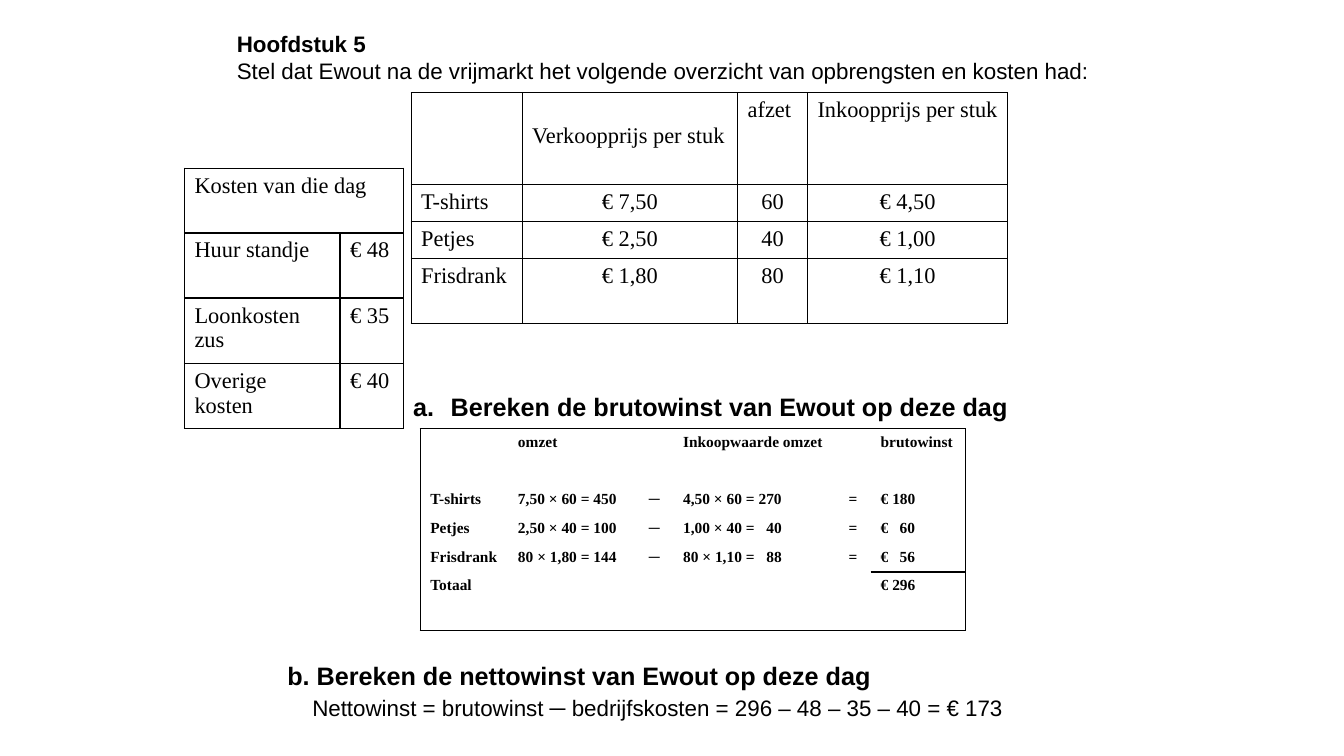
from lxml.etree import SubElement
from pptx import Presentation
from pptx.dml.color import RGBColor
from pptx.enum.text import MSO_ANCHOR, MSO_AUTO_SIZE, PP_ALIGN
from pptx.oxml.ns import qn
from pptx.util import Cm, Pt

BLACK = "000000"
SERIF = "Times New Roman"


def color(code):
    return RGBColor.from_string(code)


def write(para, text, size=16, font="Arial", bold=False, align=PP_ALIGN.LEFT):
    run = para.add_run()
    run.text = text
    para.alignment = align
    run.font.size = Pt(size)
    run.font.name = font
    run.font.bold = bold
    run.font.color.rgb = color(BLACK)


def frame(slide, box, anchor=MSO_ANCHOR.TOP):
    """Add a text box that does not wrap and return its text frame."""
    body = slide.shapes.add_textbox(*map(Cm, box)).text_frame
    body.word_wrap = False
    body.auto_size = MSO_AUTO_SIZE.SHAPE_TO_FIT_TEXT
    body.vertical_anchor = anchor
    return body


def letter(para, indent):
    """Number a paragraph a., b., c. with a hanging indent."""
    props = para._p.get_or_add_pPr()
    props.set("marL", str(Cm(indent)))
    props.set("indent", str(-Cm(indent)))
    SubElement(props, qn("a:buFont"), typeface="+mj-lt")
    SubElement(props, qn("a:buAutoNum"), type="alphaLcPeriod")


def tab(para, stop):
    stops = SubElement(para._p.get_or_add_pPr(), qn("a:tabLst"))
    SubElement(stops, qn("a:tab"), pos=str(Cm(stop)), algn="l")


def border(cell, sides):
    """Draw the named sides (of LRTB) in black and hide the others."""
    props = cell._tc.get_or_add_tcPr()
    for side in "LRTB":
        line = SubElement(props, qn("a:ln" + side), w=str(Pt(1)))
        if side in sides:
            fill = SubElement(line, qn("a:solidFill"))
            SubElement(fill, qn("a:srgbClr"), val=BLACK)
        else:
            SubElement(line, qn("a:noFill"))
    cell.fill.background()


def grid(slide, box, cols, rows):
    """Add a bare table at the left and top of its box."""
    left, top = box
    table = slide.shapes.add_table(
        len(rows), len(cols), Cm(left), Cm(top), Cm(sum(cols)), Cm(sum(rows))
    ).table
    table.first_row = table.horz_banding = False
    for col, width in zip(table.columns, cols):
        col.width = Cm(width)
    for row, height in zip(table.rows, rows):
        row.height = Cm(height)
    return table


def cells(table, data):
    """Yield row, column, cell and text for each entry."""
    for r, line in enumerate(data):
        for c, text in enumerate(line):
            yield r, c, table.cell(r, c), text


def intro(slide, box):
    body = frame(slide, box, MSO_ANCHOR.MIDDLE)
    write(body.paragraphs[0], "Hoofdstuk 5", bold=True)
    write(body.add_paragraph(),
          "Stel dat Ewout na de vrijmarkt het volgende overzicht van opbrengsten en kosten had:")


def prices(slide, box):
    data = [
        ["", "Verkoopprijs per stuk", "afzet", "Inkoopprijs per stuk"],
        ["T-shirts", "€ 7,50", "60", "€ 4,50"],
        ["Petjes", "€ 2,50", "40", "€ 1,00"],
        ["Frisdrank", "€ 1,80", "80", "€ 1,10"],
    ]
    table = grid(slide, box, [2.8, 5.43, 1.76, 5.05], [2.3, 0.94, 0.94, 1.63])
    for r, c, cell, text in cells(table, data):
        border(cell, "LRTB")
        if text:
            align = PP_ALIGN.CENTER if r and c else PP_ALIGN.LEFT
            write(cell.text_frame.paragraphs[0], text, font=SERIF, align=align)
    # The first heading sits one line lower
    table.cell(0, 1).margin_top = Cm(0.76)


def costs(slide, box):
    data = [
        ["Kosten van die dag", ""],
        ["Huur standje", "€ 48"],
        ["Loonkosten zus", "€ 35"],
        ["Overige kosten", "€ 40"],
    ]
    table = grid(slide, box, [3.92, 1.59], [1.63] + [1.64] * 3)
    table.cell(0, 0).merge(table.cell(0, 1))
    for r, c, cell, text in cells(table, data):
        border(cell, "LRTB")
        if text:
            write(cell.text_frame.paragraphs[0], text, font=SERIF)


def profit(slide, box):
    data = [
        ["", "omzet", "", "Inkoopwaarde omzet", "", "brutowinst"],
        ["T-shirts", "7,50 × 60 = 450", "─", "4,50 × 60 = 270", "=", "€ 180"],
        ["Petjes", "2,50 × 40 = 100", "─", "1,00 × 40 =\t40", "=", "€\t60"],
        ["Frisdrank", "80 × 1,80 = 144", "─", "80 × 1,10 =\t88", "=", "€\t56"],
        ["Totaal", "", "", "", "", "€ 296"],
    ]
    stops = {3: 2.1, 5: 0.48}
    end, last = len(data) - 1, len(data[0]) - 1
    table = grid(slide, box, [2.21, 3.3, 0.86, 4.17, 0.81, 2.39],
                 [1.45] + [0.72] * 3 + [1.47])
    for r, c, cell, text in cells(table, data):
        # Outer frame, plus the sum line above the total
        sides = "L" * (c == 0) + "R" * (c == last)
        sides += "T" * (r == 0 or (r, c) == (end, last))
        sides += "B" * (r == end or (r, c) == (end - 1, last))
        border(cell, sides)
        para = cell.text_frame.paragraphs[0]
        if "\t" in text:
            tab(para, stops[c])
        if text:
            write(para, text, size=11, font=SERIF, bold=True)


def gross(slide, box):
    para = frame(slide, box).paragraphs[0]
    letter(para, 0.95)
    write(para, "Bereken de brutowinst van Ewout op deze dag", size=18, bold=True)


def net(slide, box):
    left, top, width, height = box
    head = frame(slide, (left, top, 15.6, 1.02))
    write(head.paragraphs[0], "b. Bereken de nettowinst van Ewout op deze dag",
          size=18, bold=True)
    answer = frame(slide, (left + 0.63, top + 0.85, width - 0.63, height - 0.85),
                   MSO_ANCHOR.MIDDLE)
    write(answer.paragraphs[0],
          "Nettowinst = brutowinst ─ bedrijfskosten = 296 – 48 – 35 – 40 = € 173")


def main():
    deck = Presentation()
    deck.slide_width, deck.slide_height = Cm(33.87), Cm(19.05)
    slide = deck.slides.add_slide(deck.slide_layouts[6])
    intro(slide, (5.72, 0.62, 22.05, 1.63))
    prices(slide, (10.36, 2.34))
    costs(slide, (4.65, 4.24))
    profit(slide, (10.59, 10.8))
    gross(slide, (10.16, 9.74, 15.9, 1.02))
    net(slide, (6.99, 16.51, 18.77, 1.79))
    deck.save("out.pptx")


if __name__ == "__main__":
    main()
